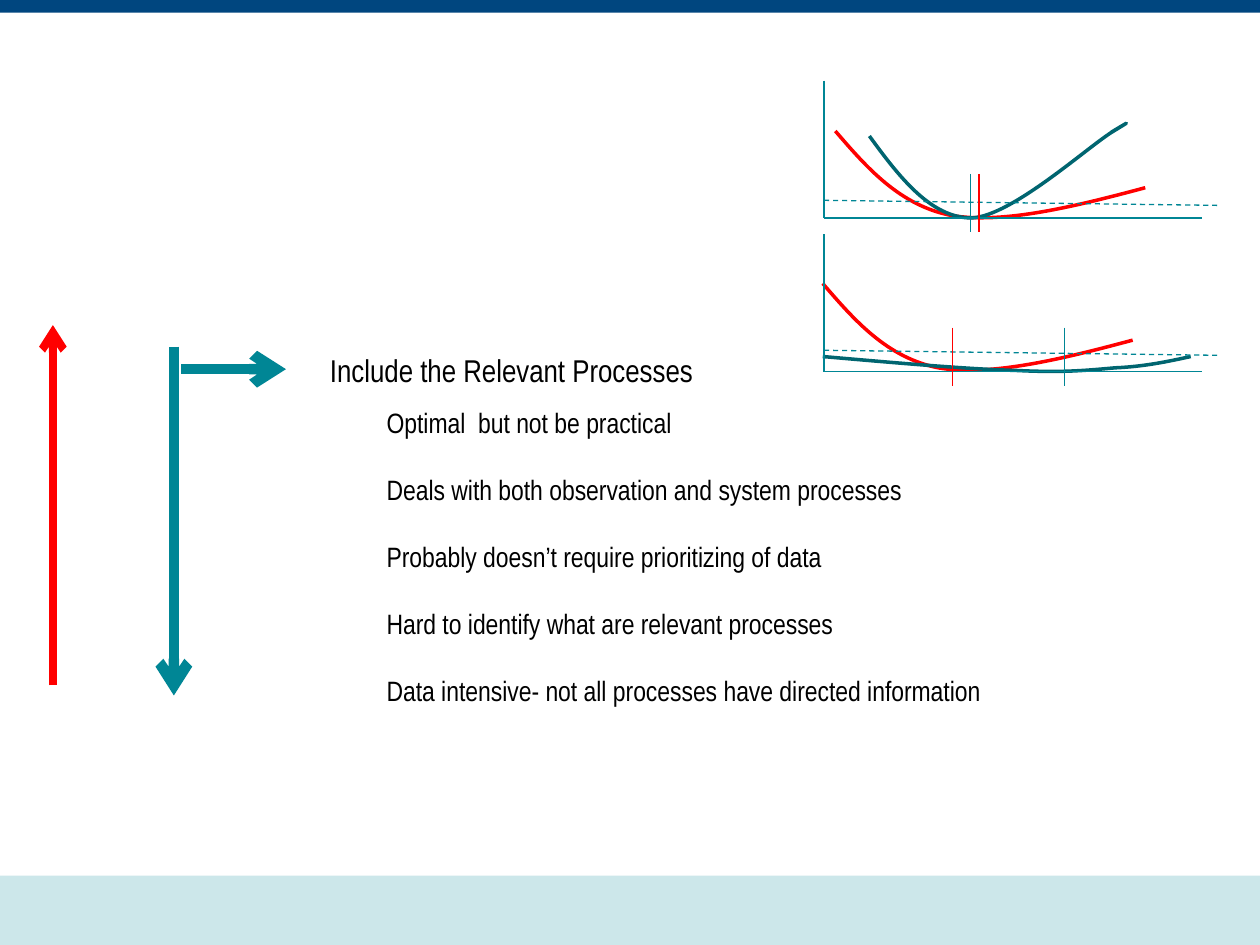
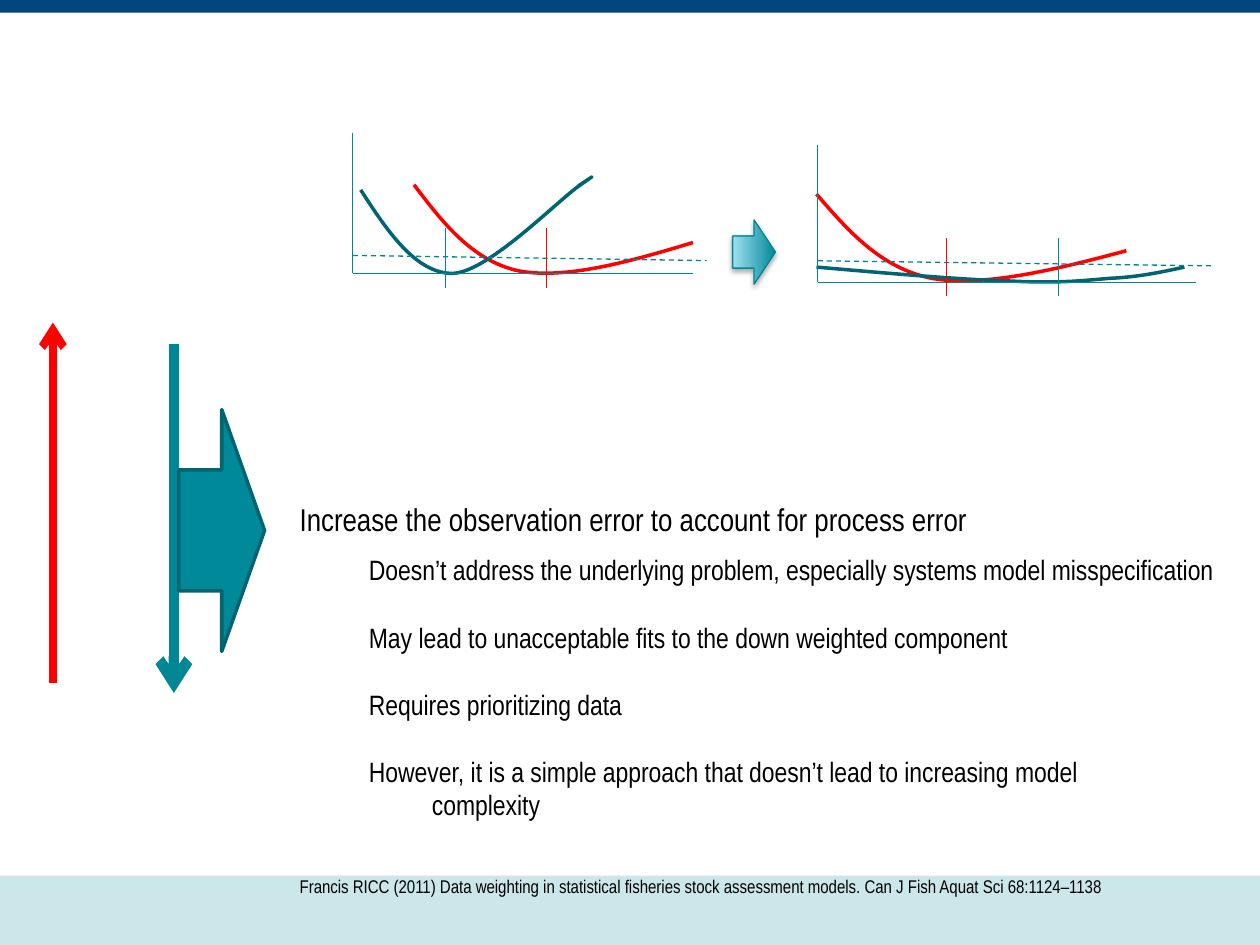
import pptx
import pptx.util
import pptx.dml.color
import pptx.enum.dml
import pptx.enum.shapes
import pptx.oxml
import pptx.oxml.ns
from lxml import etree

Inches = pptx.util.Inches
Pt = pptx.util.Pt
RGBColor = pptx.dml.color.RGBColor
Shape = pptx.enum.shapes.MSO_SHAPE
qn = pptx.oxml.ns.qn

NAVY = RGBColor(0x00, 0x46, 0x7F)
PALE = RGBColor(0xCC, 0xE7, 0xEA)
TEAL = RGBColor(0x00, 0x86, 0x95)
FILL_TEAL = RGBColor(0x00, 0x89, 0x98)
DARK_TEAL = RGBColor(0x00, 0x65, 0x70)
LIGHT_BLUE = RGBColor(0xA0, 0xE0, 0xF1)
RED = RGBColor(0xFF, 0x00, 0x00)
BLACK = RGBColor(0x00, 0x00, 0x00)
FONT = "Arial Narrow"

BANDS = [(6.95, 0.55, PALE), (0, 0.1, NAVY)]

WIDE = [(0, 0), (0.25, 0.29), (0.51, 0.59), (0.92, 0.67),
        (1.33, 0.74), (1.9, 0.6), (2.46, 0.45)]
NARROW = [(0, 0), (0.24, 0.33), (0.49, 0.65), (0.81, 0.65),
          (1.13, 0.64), (1.75, 0.07), (1.94, -0.04),
          (2.12, -0.15), (2.02, -0.09), (1.92, -0.03)]
FLAT = [(0, 0), (-0.18, 0.04), (-0.37, 0.08), (-0.6, 0.09),
        (-0.83, 0.11), (-1.01, 0.13), (-1.4, 0.11),
        (-1.78, 0.1), (-2.35, 0.05), (-2.92, 0)]

AGREEING = {
    "level": -0.14,
    "curves": [(WIDE, RED, (0.09, -0.69)), (NARROW, DARK_TEAL, (0.36, -0.65))],
    "marks": [(1.16, TEAL), (1.23, RED)],
}
CONFLICTING = {
    "level": -0.14,
    "curves": [(WIDE, RED, (0.54, -0.69)), (NARROW, DARK_TEAL, (0.07, -0.65))],
    "marks": [(0.82, TEAL), (1.71, RED)],
}
DOWNWEIGHTED = {
    "level": -0.17,
    "curves": [(WIDE, RED, (-0.01, -0.7)), (FLAT, DARK_TEAL, (2.91, -0.12))],
    "marks": [(1.91, TEAL), (1.02, RED)],
}

PAGES = [
    {
        "heading": ("Include the Relevant Processes", 2.52, 2.74, 3.12),
        "points": (2.97, 3.17, 5.54, 2.52, [
            "Optimal  but not be practical",
            "Deals with both observation and system processes",
            "Probably doesn’t require prioritizing of data",
            "Hard to identify what are relevant processes",
            "Data intensive- not all processes have directed information",
        ]),
        "arrows_top": 2.75,
        "plots": [(AGREEING, 6.54, 1.73, 1, 1), (DOWNWEIGHTED, 6.54, 2.95, 1, 1)],
    },
    {
        "heading": ("Increase the observation error to account for process error",
                    2.28, 3.92, 6.34),
        "points": (2.83, 4.34, 6.95, 2.26, [
            "Doesn’t address the underlying problem, especially systems model misspecification",
            "May lead to unacceptable fits to the down weighted component",
            "Requires prioritizing data",
            "However, it is a simple approach that doesn’t lead to increasing model\vcomplexity",
        ]),
        "arrows_top": 2.73,
        "plots": [(CONFLICTING, 2.8, 2.17, 0.9, 1.02), (DOWNWEIGHTED, 6.49, 2.24, 1, 1)],
    },
]
CITATION = ("Francis RICC (2011) Data weighting in statistical fisheries stock assessment "
            "models. Can J Fish Aquat Sci 68:1124–1138")


def add_block(page, kind, left, top, width, height, fill, line=None, weight=0.75):
    shape = page.shapes.add_shape(kind, Inches(left), Inches(top), Inches(width), Inches(height))
    shape.shadow.inherit = False
    shape.fill.solid()
    shape.fill.fore_color.rgb = fill
    if line is None:
        shape.line.fill.background()
    else:
        shape.line.color.rgb = line
        shape.line.width = Pt(weight)
    return shape


def add_bands(deck, page):
    for top, height, color in BANDS:
        band = add_block(page, Shape.RECTANGLE, 0, top, 10, height, color)
        deck.slide_master.shapes._spTree.append(band._element)


def add_line(page, start, end, color, weight=0.75, dashed=False, arrow=False):
    line = page.shapes.add_connector(
        pptx.enum.shapes.MSO_CONNECTOR.STRAIGHT, *(Inches(value) for value in (*start, *end)))
    line.line.color.rgb = color
    line.line.width = Pt(weight)
    if dashed:
        line.line.dash_style = pptx.enum.dml.MSO_LINE.DASH
    if arrow:
        etree.SubElement(line.line._get_or_add_ln(), qn("a:tailEnd"), type="arrow")
    etree.SubElement(line._element.spPr, qn("a:effectLst"))


def add_text(page, texts, left, top, width, height, size, gap=0, hanging=0):
    box = page.shapes.add_textbox(Inches(left), Inches(top), Inches(width), Inches(height))
    frame = box.text_frame
    frame.word_wrap = True
    for number, text in enumerate(texts):
        para = frame.add_paragraph() if number else frame.paragraphs[0]
        para.text = text
        if number:
            para.space_before = Pt(gap)
        if hanging:
            properties = para._p.get_or_add_pPr()
            properties.set("marL", str(Inches(hanging)))
            properties.set("indent", str(-Inches(hanging)))
        for span in para.runs:
            span.font.name = FONT
            span.font.size = Pt(size)
            span.font.color.rgb = BLACK


def add_curve(page, controls, color):
    corners = [(Inches(x), Inches(y)) for x, y in controls]
    builder = page.shapes.build_freeform(*corners[0])
    builder.add_line_segments(corners[1:], close=False)
    curve = builder.convert_to_shape()
    segments = list(curve._element.iter(qn("a:lnTo")))
    for first in range(0, len(segments), 3):
        bezier = etree.Element(qn("a:cubicBezTo"))
        segments[first].addprevious(bezier)
        for segment in segments[first:first + 3]:
            bezier.append(segment[0])
            segment.getparent().remove(segment)
    curve.shadow.inherit = False
    curve.fill.background()
    curve.line.color.rgb = color
    curve.line.width = Pt(2)


def add_plot(page, plot, left, base, x_scale, y_scale):
    def place(x, y):
        return left + x * x_scale, base + y * y_scale

    for controls, color, (x, y) in plot["curves"]:
        add_curve(page, [place(x + dx, y + dy) for dx, dy in controls], color)
    level = plot["level"]
    add_line(page, place(0, -1.09), place(0, 0), TEAL)
    add_line(page, place(0, 0), place(3, 0), TEAL)
    add_line(page, place(0, level), place(3.12, level + 0.04), TEAL, dashed=True)
    for x, color in plot["marks"]:
        add_line(page, place(x, -0.35), place(x, 0.11), color)


def add_transition_arrow(page):
    arrow = add_block(page, Shape.DOWN_ARROW, 5.73, 1.83, 0.51, 0.34, FILL_TEAL, TEAL)
    arrow.rotation = 270
    arrow.fill.gradient()
    arrow.fill.gradient_angle = 90
    for stop, color, position in zip(arrow.fill.gradient_stops, (FILL_TEAL, LIGHT_BLUE), (0, 1)):
        stop.color.rgb = color
        stop.position = position
    effects = arrow._element.spPr.find(qn("a:effectLst"))
    shadow = etree.SubElement(effects, qn("a:outerShdw"), blurRad=str(Pt(3.1)),
                              dist=str(Pt(1.8)), dir="5400000", rotWithShape="0")
    color = etree.SubElement(shadow, qn("a:srgbClr"), val=str(BLACK))
    etree.SubElement(color, qn("a:alpha"), val="35000")


def add_page(deck, content):
    page = deck.slides.add_slide(deck.slide_layouts[6])
    heading, left, top, width = content["heading"]
    add_text(page, [heading], left, top, width, 0.4, 18)
    left, top, width, height, points = content["points"]
    add_text(page, points, left, top, width, height, 16, gap=19.1, hanging=0.5)
    top = content["arrows_top"]
    add_line(page, (1.38, top), (1.38, top + 2.77), TEAL, 6, arrow=True)
    add_line(page, (0.42, top + 2.69), (0.42, top - 0.17), RED, 4.5, arrow=True)
    for plot in content["plots"]:
        add_plot(page, *plot)
    return page


def main():
    deck = pptx.Presentation()
    deck.slide_width = Inches(10)
    deck.slide_height = Inches(7.5)
    processes, weighting = (add_page(deck, content) for content in PAGES)
    add_bands(deck, processes)
    add_line(processes, (1.44, 2.93), (2.27, 2.93), TEAL, 6, arrow=True)
    add_block(weighting, Shape.RIGHT_ARROW, 1.42, 3.25, 0.68, 1.92, FILL_TEAL, DARK_TEAL, 2)
    add_text(weighting, [CITATION], 2.28, 6.9, 7.25, 0.28, 10.5)
    add_transition_arrow(weighting)
    deck.save("out.pptx")


if __name__ == "__main__":
    main()
